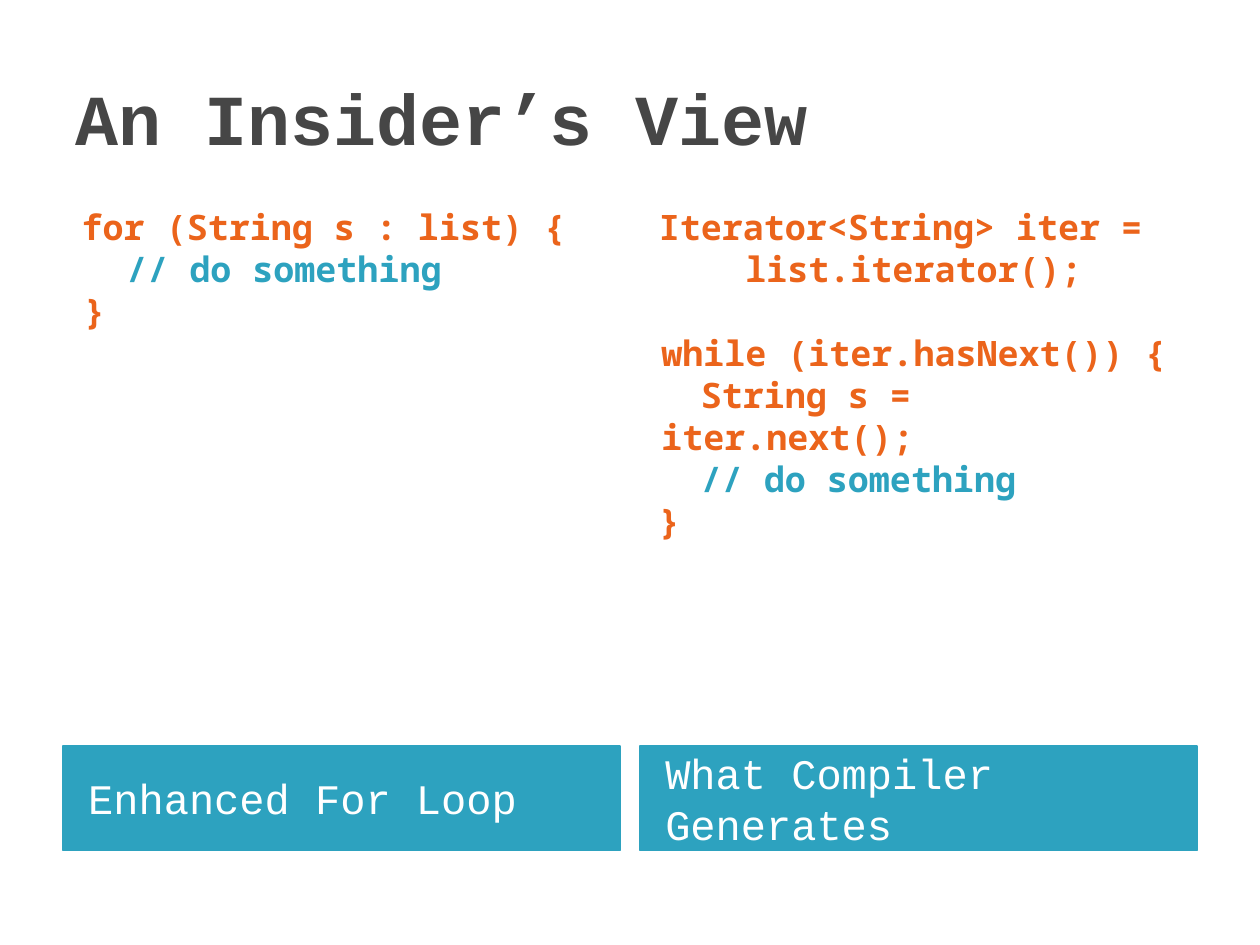
from lxml.etree import SubElement
from pptx import Presentation
from pptx.dml.color import RGBColor
from pptx.enum.shapes import MSO_SHAPE
from pptx.enum.text import MSO_ANCHOR, PP_ALIGN
from pptx.oxml.ns import qn
from pptx.util import Inches, Pt

TEAL = RGBColor(0x2D, 0xA2, 0xBF)
ORANGE = RGBColor(0xEB, 0x64, 0x1B)
GRAY = RGBColor(0x46, 0x46, 0x46)
WHITE = RGBColor(0xFF, 0xFF, 0xFF)
TITLE_FONT = "Courier New"
CODE_FONT = "Noto Sans Mono"

TITLE = "An Insider’s View"
COLUMNS = [
    {
        "caption": "Enhanced For Loop",
        "code": [
            [("for (String s : list) {\n  ", ORANGE), ("// do something\n", TEAL), ("}", ORANGE)],
        ],
    },
    {
        "caption": "What Compiler Generates",
        "code": [
            [("Iterator<String> iter =\n    list.iterator();\n\nwhile (iter.hasNext()) {", ORANGE)],
            [("  String s = iter.next();", ORANGE)],
            [("  // do something", TEAL)],
            [("}", ORANGE)],
        ],
    },
]

SLIDE_WIDTH, SLIDE_HEIGHT = 10, 7.5
MARGIN = SLIDE_WIDTH * 0.05
GUTTER = 0.16
COLUMN_WIDTH = (SLIDE_WIDTH - 2 * MARGIN - GUTTER) / 2
TITLE_TOP, TITLE_HEIGHT = SLIDE_HEIGHT * 0.04, 1.25
CODE_TOP, CODE_HEIGHT = 1.58, 4.31
CAPTION_TOP, CAPTION_HEIGHT = 5.92, 0.83


def write_text(shape, paragraphs, font, size, bold=False, anchor=MSO_ANCHOR.TOP,
               left_inset=0.1, margin=0, indent=0):
    frame = shape.text_frame
    frame.word_wrap = True
    frame.vertical_anchor = anchor
    frame.margin_left, frame.margin_right = Inches(left_inset), Inches(0.1)
    frame.margin_top = frame.margin_bottom = Inches(0.05)
    for index, pieces in enumerate(paragraphs):
        paragraph = frame.add_paragraph() if index else frame.paragraphs[0]
        paragraph.alignment = PP_ALIGN.LEFT
        properties = paragraph._p.get_or_add_pPr()
        properties.set("marL", str(Inches(margin)))
        properties.set("indent", str(Inches(indent)))
        for text, color in pieces:
            for row, line in enumerate(text.split("\n")):
                if row:
                    paragraph.add_line_break()
                if line:
                    run = paragraph.add_run()
                    run.text = line
                    run.font.color.rgb = color
                    run.font.name = font
                    run.font.size = Pt(size)
                    run.font.bold = bold
        for line_break in paragraph._p.findall(qn("a:br")):
            break_format = SubElement(line_break, qn("a:rPr"), sz=str(size * 100))
            SubElement(break_format, qn("a:latin"), typeface=font)


def place(left, top, width, height):
    return [Inches(length) for length in (left, top, width, height)]


def build():
    deck = Presentation()
    deck.slide_width, deck.slide_height = Inches(SLIDE_WIDTH), Inches(SLIDE_HEIGHT)
    slide = deck.slides.add_slide(deck.slide_layouts[5])

    title = slide.shapes.title
    title.left, title.top, title.width, title.height = place(
        MARGIN, TITLE_TOP, SLIDE_WIDTH - 2 * MARGIN, TITLE_HEIGHT)
    write_text(title, [[(TITLE, GRAY)]], TITLE_FONT, 41, bold=True, anchor=MSO_ANCHOR.MIDDLE)

    for index, column in enumerate(COLUMNS):
        left = MARGIN + index * (COLUMN_WIDTH + GUTTER)
        caption = slide.shapes.add_shape(
            MSO_SHAPE.RECTANGLE, *place(left, CAPTION_TOP, COLUMN_WIDTH, CAPTION_HEIGHT))
        caption.shadow.inherit = False
        caption.fill.solid()
        caption.fill.fore_color.rgb = TEAL
        caption.line.color.rgb = TEAL
        caption.line.width = Pt(0.75)
        write_text(caption, [[(column["caption"], WHITE)]], TITLE_FONT, 24,
                   anchor=MSO_ANCHOR.MIDDLE, left_inset=0.2)

        code = slide.shapes.add_textbox(*place(left, CODE_TOP, COLUMN_WIDTH, CODE_HEIGHT))
        write_text(code, column["code"], CODE_FONT, 20, bold=True, margin=0.07, indent=-0.02)

    deck.save("out.pptx")


if __name__ == "__main__":
    build()
